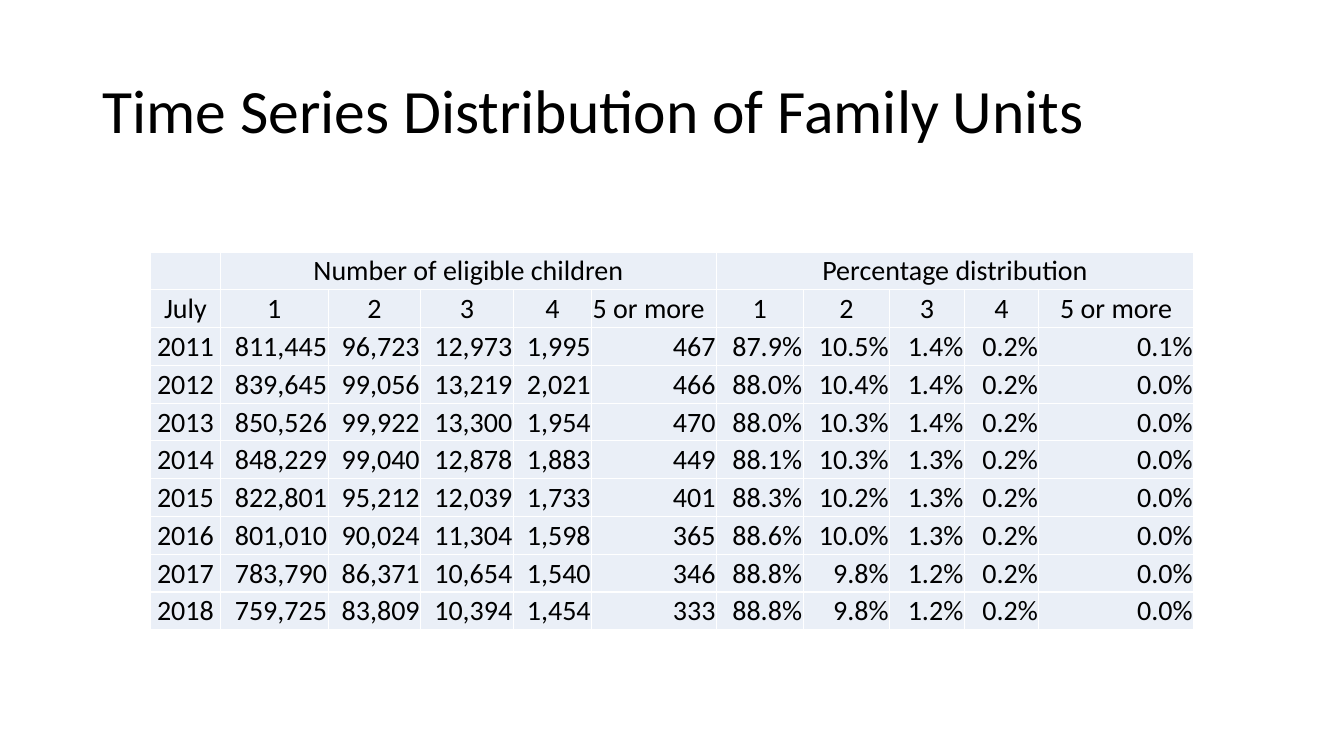
from lxml.etree import SubElement
from pptx import Presentation
from pptx.dml.color import RGBColor
from pptx.enum.text import MSO_ANCHOR as ANCHOR, PP_ALIGN as ALIGN
from pptx.oxml.ns import qn
from pptx.util import Pt

BLACK = RGBColor(0x00, 0x00, 0x00)
WHITE = RGBColor(0xFF, 0xFF, 0xFF)
PALE_BLUE = RGBColor(0xEA, 0xEF, 0xF7)

TITLE_FONT = {"name": "Calibri", "size": Pt(44)}
CELL_FONT = {"name": "Calibri", "size": Pt(20)}
CELL_FORMAT = {
    "margin_left": Pt(0.7),
    "margin_right": Pt(0.7),
    "margin_top": Pt(0.7),
    "margin_bottom": Pt(0),
    "vertical_anchor": ANCHOR.MIDDLE,
}
COL_WIDTHS = [50, 77, 66.2, 66.2, 56, 89.2, 61.9, 61.9, 53.3, 53.3, 110.6]
GROUPS = {1: "Number of eligible children", 6: "Percentage distribution"}
GROUP_SIZE = 5
SIZES = ["1", "2", "3", "4", "5 or more"]
YEARS = """
2011 811,445 96,723 12,973 1,995 467 87.9% 10.5% 1.4% 0.2% 0.1%
2012 839,645 99,056 13,219 2,021 466 88.0% 10.4% 1.4% 0.2% 0.0%
2013 850,526 99,922 13,300 1,954 470 88.0% 10.3% 1.4% 0.2% 0.0%
2014 848,229 99,040 12,878 1,883 449 88.1% 10.3% 1.3% 0.2% 0.0%
2015 822,801 95,212 12,039 1,733 401 88.3% 10.2% 1.3% 0.2% 0.0%
2016 801,010 90,024 11,304 1,598 365 88.6% 10.0% 1.3% 0.2% 0.0%
2017 783,790 86,371 10,654 1,540 346 88.8% 9.8% 1.2% 0.2% 0.0%
2018 759,725 83,809 10,394 1,454 333 88.8% 9.8% 1.2% 0.2% 0.0%
"""


def set_format(obj, values):
    """Set each named attribute of an object."""
    for name, value in values.items():
        setattr(obj, name, value)


def write(p, text, font, align):
    """Write one black run in a paragraph."""
    p.alignment = align
    r = p.add_run()
    r.text = text
    set_format(r.font, font)
    r.font.color.rgb = BLACK


def style_cell(cell):
    """Give a cell its white borders, insets and fill."""
    tc_pr = cell._tc.get_or_add_tcPr()
    for side in ("lnL", "lnR", "lnT", "lnB"):
        ln = SubElement(tc_pr, qn(f"a:{side}"), w=str(Pt(1)))
        fill = SubElement(ln, qn("a:solidFill"))
        SubElement(fill, qn("a:srgbClr"), val=str(WHITE))
    set_format(cell, CELL_FORMAT)
    cell.fill.solid()
    cell.fill.fore_color.rgb = PALE_BLUE


def add_title(s, text, left, top, width, height):
    """Place and format the slide title."""
    sp = s.shapes.title
    box = {"left": left, "top": top, "width": width, "height": height}
    set_format(sp, {side: Pt(value) for side, value in box.items()})
    tf = sp.text_frame
    set_format(tf, {"vertical_anchor": ANCHOR.MIDDLE, "word_wrap": True})
    p = tf.paragraphs[0]
    p.line_spacing = 0.9
    write(p, text, TITLE_FONT, ALIGN.LEFT)


def cell_align(row, col):
    """Return the alignment of a cell by its place in the table."""
    if (row, col) == (1, GROUP_SIZE):
        return ALIGN.LEFT
    return ALIGN.RIGHT if row > 1 and col > 0 else ALIGN.CENTER


def add_family_table(s, left, top, width, height):
    """Add the table of family units by year."""
    header = [GROUPS.get(col, "") for col in range(len(COL_WIDTHS))]
    rows = [header, ["July", *SIZES, *SIZES]]
    rows += [line.split() for line in YEARS.strip().splitlines()]
    box = map(Pt, (left, top, width, height))
    table = s.shapes.add_table(len(rows), len(COL_WIDTHS), *box).table
    set_format(table, {"first_row": False, "horz_banding": False})
    scale = width / sum(COL_WIDTHS)
    for column, col_width in zip(table.columns, COL_WIDTHS):
        column.width = Pt(col_width * scale)
    for i, texts in enumerate(rows):
        table.rows[i].height = Pt(height / len(rows))
        for j, text in enumerate(texts):
            cell = table.cell(i, j)
            style_cell(cell)
            if text:
                p = cell.text_frame.paragraphs[0]
                write(p, text, CELL_FONT, cell_align(i, j))
    for col in GROUPS:
        table.cell(0, col).merge(table.cell(0, col + GROUP_SIZE - 1))


def main():
    """Build the slide and save it."""
    prs = Presentation()
    set_format(prs, {"slide_width": Pt(960), "slide_height": Pt(540)})
    s = prs.slides.add_slide(prs.slide_layouts[5])
    add_title(s, "Time Series Distribution of Family Units", 66, 28.75, 828, 104.4)
    add_family_table(s, 107.5, 180, 745.2, 270)
    prs.save("out.pptx")


if __name__ == "__main__":
    main()
